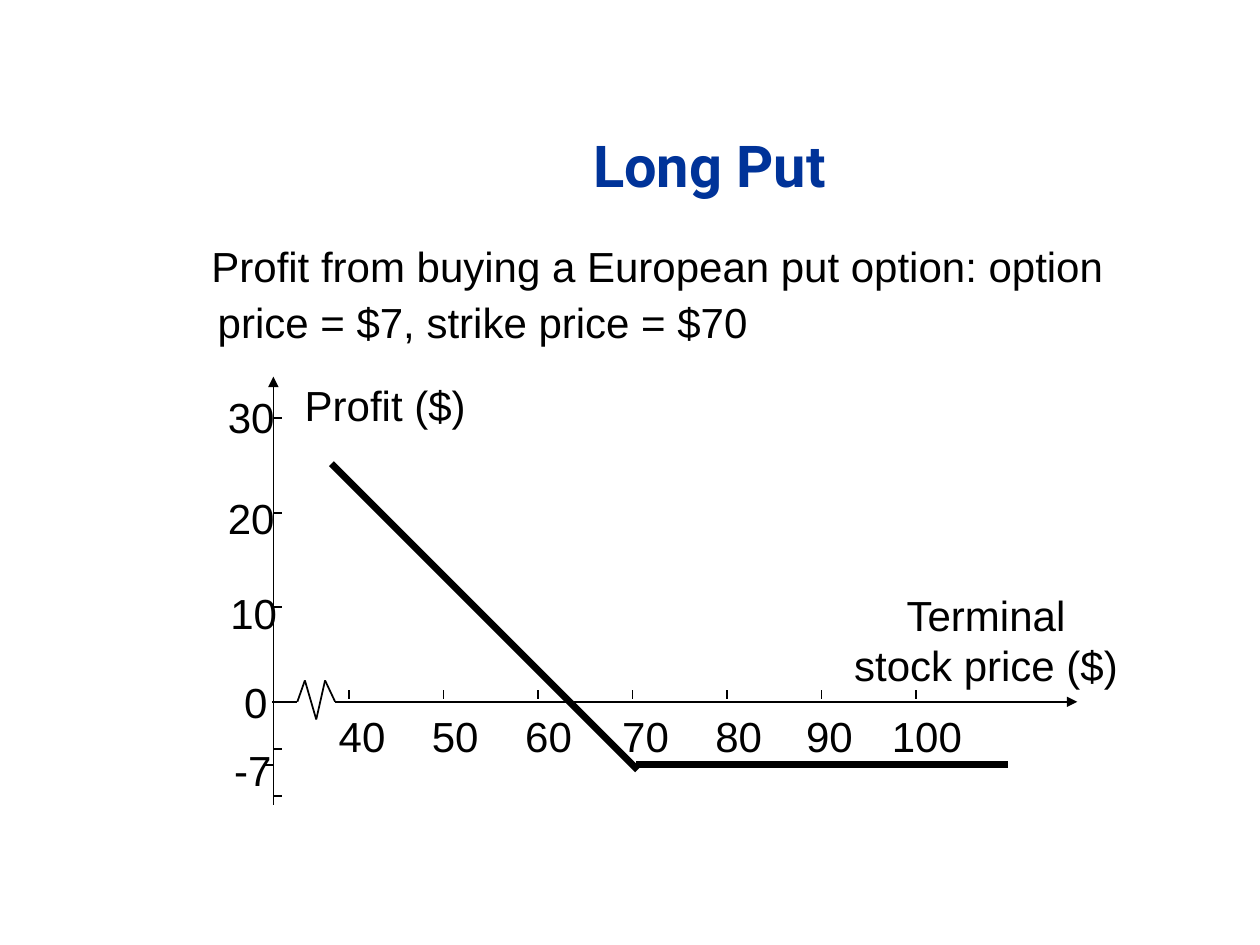
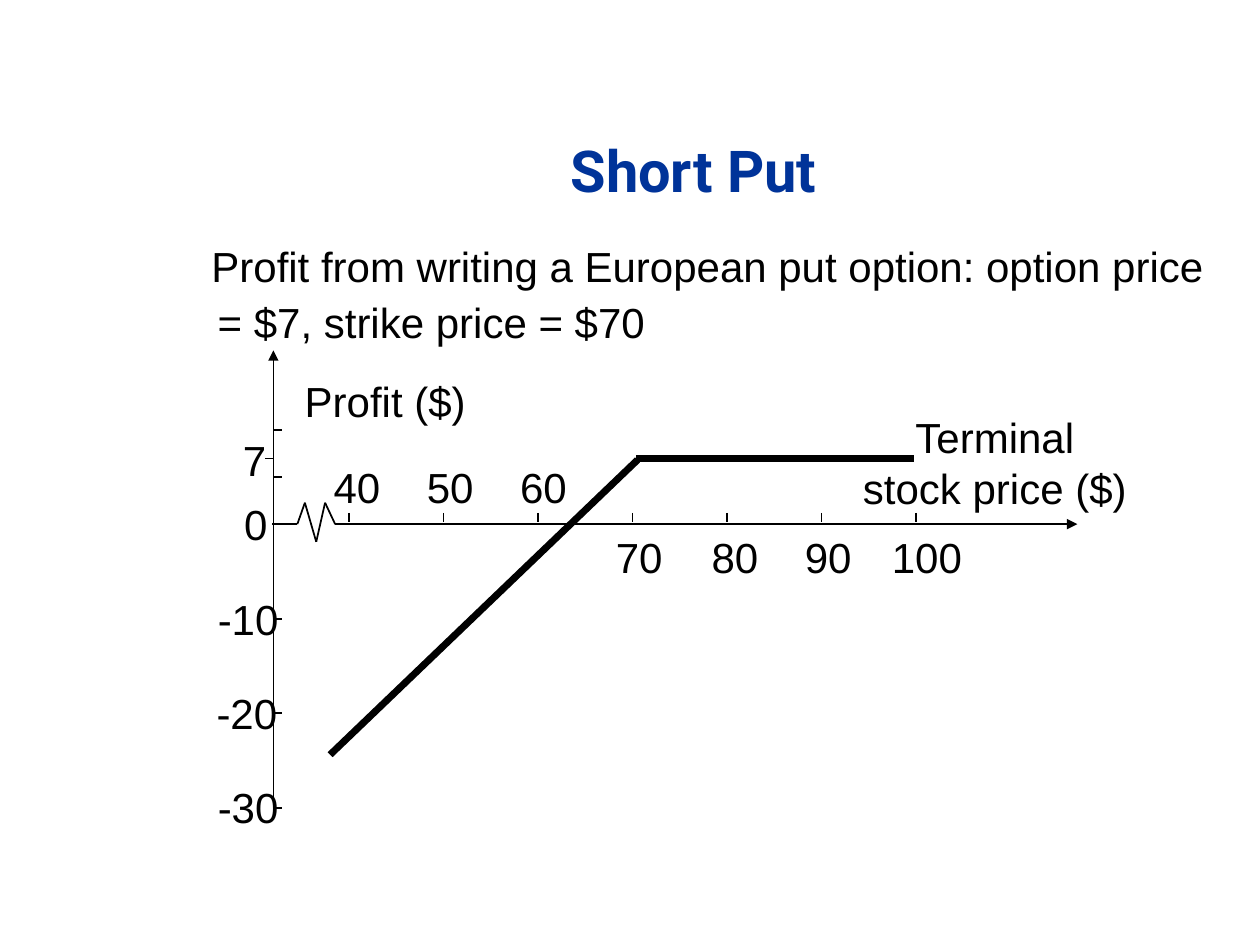
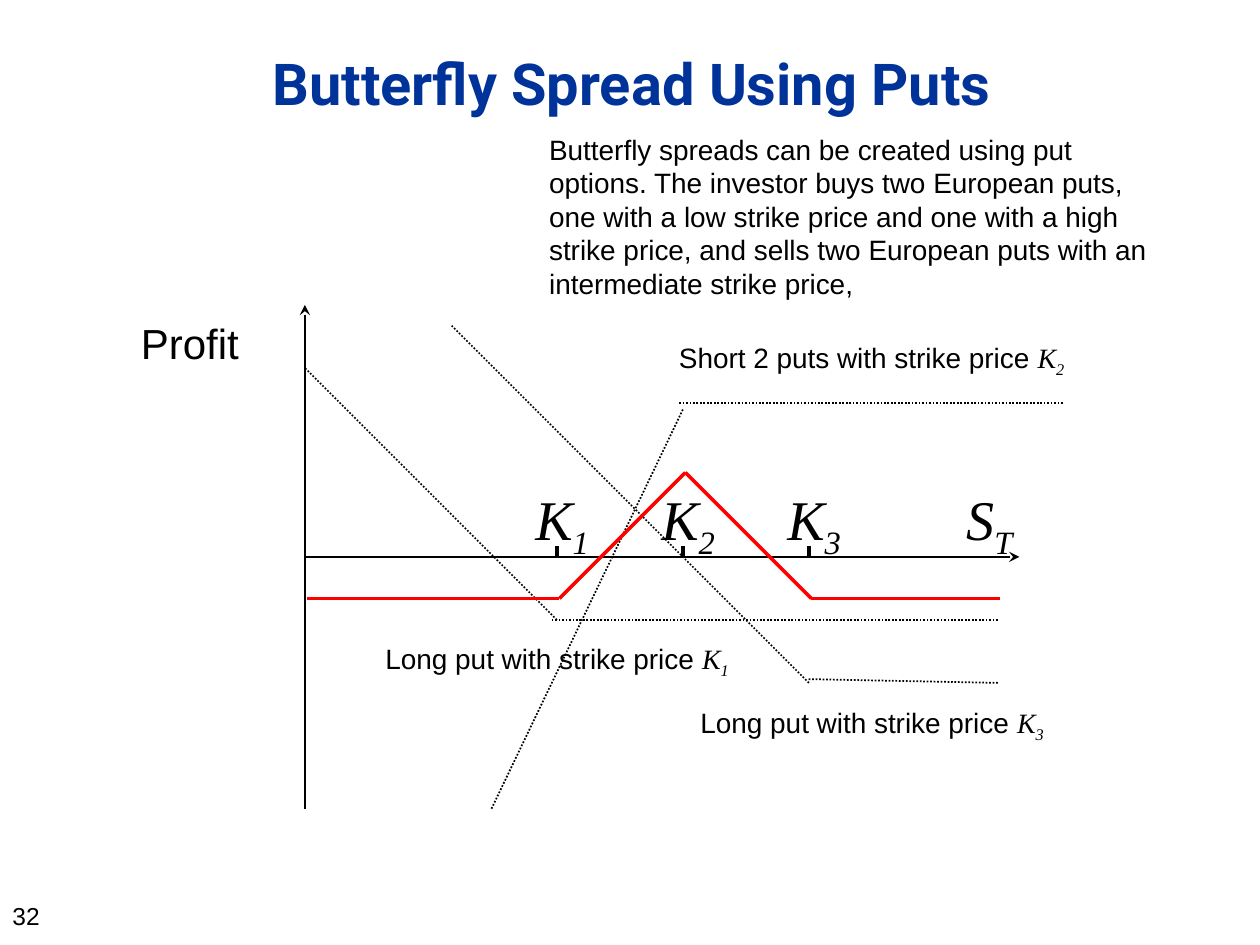
"""Build three slides on option payoffs: long put, short put and a butterfly spread."""
import itertools

import pptx
import pptx.dml.color
import pptx.enum.dml
import pptx.enum.shapes
import pptx.enum.text
import pptx.oxml
import pptx.oxml.ns
import pptx.util

Inches = pptx.util.Inches
ALIGN = pptx.enum.text.PP_ALIGN
ANCHOR = pptx.enum.text.MSO_ANCHOR
FIT = pptx.enum.text.MSO_AUTO_SIZE
DOT = pptx.enum.dml.MSO_LINE.ROUND_DOT

BLACK, NAVY, RED = "000000", "003399", "FF0000"
TITLE = {"name": "Roboto", "size": 33, "bold": True, "color": NAVY}
LABEL = {"name": "Arial", "size": 24, "color": BLACK}
NOTE = {**LABEL, "size": 16}
NUMBER = {**LABEL, "size": 14}
SYMBOL = {"name": "Times New Roman", "size": 32, "italic": True, "color": BLACK}
NOTE_SYMBOL = {**SYMBOL, "size": 16}

AXIS_X, AXIS_BOTTOM, AXIS_RIGHT = 2.17, 6.39, 8.55
PRICE_40_X, INCH_PER_DOLLAR = 2.77, 0.075
PRICES = range(40, 101, 10)
AXIS_BREAK = [(2.16, 0), (2.36, 0), (2.42, -0.17), (2.51, 0.14), (2.58, -0.17), (2.66, 0)]

PUTS = [
    {
        "title": ("Long Put", (1.92, 0.58, 7.42, 1.42)),
        "body": "Profit from buying a European put option: option price = $7, strike price = $70",
        "body_width": 8.4,
        "zero_y": 5.57,
        "axis_top": 2.99,
        "profit_ticks": [30, 20, 10, -5, -10],
        "premium": -7,
        "profit_labels": [("30", 1.71, 3.06), ("20", 1.71, 3.86), ("10", 1.73, 4.61),
                          ("0", 1.84, 5.32), ("-7", 1.76, 5.86)],
        "price_lefts": [2.59, 3.33, 4.07, 4.84, 5.58, 6.3, 6.98],
        "price_tops": [5.59] * 7,
        "profit_title_y": 2.96,
        "price_title": (6.68, 4.63, 2.29, 0.9),
        "payoff": [((5.05, 6.07), (8, 6.07)), ((5.06, 6.11), (2.63, 3.68))],
    },
    {
        "title": ("Short Put", (1.42, 0.67, 8.17, 1.33)),
        "body": "Profit from writing a European put option: option price = $7, strike price = $70",
        "body_width": 8.44,
        "zero_y": 4.16,
        "axis_top": 2.78,
        "profit_ticks": [10, 5, -10, -20, -30],
        "premium": 7,
        "profit_labels": [("7", 1.83, 3.4), ("0", 1.84, 3.91), ("-10", 1.63, 4.66),
                          ("-20", 1.62, 5.41), ("-30", 1.63, 6.15)],
        "price_lefts": [2.55, 3.29, 4.03, 4.79, 5.55, 6.29, 6.98],
        "price_tops": [3.61] * 3 + [4.17] * 4,
        "profit_title_y": 2.93,
        "price_title": (6.75, 3.22, 2.29, 0.9),
        "payoff": [((5.05, 3.64), (7.25, 3.64)), ((5.06, 3.65), (2.62, 5.99))],
    },
]

SPREAD_TITLE = ("Butterfly Spread Using Puts", (0.5, 0.26, 9.03, 1.31))
SPREAD_TEXT = (
    "Butterﬂy spreads can be created using put options. The investor buys two European puts, "
    "one with a low strike price and one with a high strike price, and sells two European puts "
    "with an intermediate strike price,"
)
SPREAD_ORIGIN = (2.42, 4.42)
STRIKE_XS = [4.42, 5.42, 6.42]
SYMBOLS = [("K", "1", 4.15, 0.64), ("K", "2", 5.15, 0.64), ("K", "3", 6.15, 0.64),
           ("S", "T", 7.57, 0.59)]
LEG_NOTES = [
    ("Short 2 puts with strike price ", "2", 5.29, 2.65),
    ("Long put with strike price ", "3", 5.46, 5.55),
    ("Long put with strike price ", "1", 2.96, 5.04),
]
LEGS = [
    ((7.92, 4.92), (4.38, 4.92)), ((4.42, 4.92), (2.42, 2.92)),
    ((7.92, 5.42), (6.41, 5.39)), ((6.42, 5.42), (3.58, 2.58)),
    ((5.39, 3.2), (8.44, 3.2)), ((5.42, 3.25), (3.9, 6.42)),
]
SPREAD_PROFIT = [(2.44, 4.75), (4.44, 4.75), (5.44, 3.75), (6.44, 4.75), (7.94, 4.75)]


def rgb(value):
    return pptx.dml.color.RGBColor.from_string(value)


def add_run(p, text, fmt, subscript=False):
    r = p.add_run()
    r.text = text
    for key, value in fmt.items():
        if key == "color":
            r.font.color.rgb = rgb(value)
        else:
            setattr(r.font, key, pptx.util.Pt(value) if key == "size" else value)
    if subscript:
        r._r.get_or_add_rPr().set("baseline", "-25000")


def add_text(s, box, paragraphs, frame=None, para=None):
    """Each paragraph is a list of (text, format[, subscript]) runs."""
    tf = s.shapes.add_textbox(*map(Inches, box)).text_frame
    for key, value in {"word_wrap": True, **(frame or {})}.items():
        setattr(tf, key, value)
    for i, runs in enumerate(paragraphs):
        p = tf.add_paragraph() if i else tf.paragraphs[0]
        for key, value in (para or {}).items():
            setattr(p, key, value)
        for run in runs:
            add_run(p, *run)
    return tf


def add_label(s, box, *paragraphs, align=ALIGN.LEFT):
    frame = {"word_wrap": False, "auto_size": FIT.SHAPE_TO_FIT_TEXT}
    add_text(s, box, paragraphs, frame, {"alignment": align})


def add_title(s, text, box, bottom=0.05):
    frame = {"vertical_anchor": ANCHOR.MIDDLE, "margin_bottom": Inches(bottom)}
    add_text(s, box, [[(text, TITLE)]], frame, {"alignment": ALIGN.CENTER, "line_spacing": 1.05})


def add_line(s, start, end, color=BLACK, width=1, dash=None, head=None, tail=None):
    sp = s.shapes.add_connector(
        pptx.enum.shapes.MSO_CONNECTOR.STRAIGHT, *map(Inches, (*start, *end)))
    sp.line.color.rgb = rgb(color)
    sp.line.width = pptx.util.Pt(width)
    if dash:
        sp.line.dash_style = dash
    ln = sp.line._get_or_add_ln()
    for tag, kind in (("a:headEnd", head), ("a:tailEnd", tail)):
        if kind:
            end_mark = pptx.oxml.parse_xml(f"<{tag} {pptx.oxml.ns.nsdecls('a')} type='{kind}'/>")
            ln.append(end_mark)
    effects = pptx.oxml.parse_xml(f"<a:effectLst {pptx.oxml.ns.nsdecls('a')}/>")
    sp._element.spPr.append(effects)


def number_box(text, left, top):
    digits = len(text.lstrip("-"))
    return left, top, 0.2 + 0.185 * digits + 0.11 * text.count("-"), 0.5


def draw_put(s, put):
    zero = put["zero_y"]
    add_title(s, *put["title"])
    add_text(s, (1.25, 1.75, put["body_width"], 4.5), [[(put["body"], LABEL)]],
             {"margin_top": Inches(0.12)}, {"line_spacing": 1.1})
    pPr = s.shapes[-1].text_frame.paragraphs[0]._p.get_or_add_pPr()
    pPr.set("marL", str(Inches(0.38)))
    pPr.set("indent", str(Inches(-0.05)))

    add_line(s, (AXIS_X, put["axis_top"]), (AXIS_X, AXIS_BOTTOM), head="triangle")
    add_line(s, (AXIS_BREAK[-1][0], zero), (AXIS_RIGHT, zero), tail="triangle")
    for (x1, dy1), (x2, dy2) in itertools.pairwise(AXIS_BREAK):
        add_line(s, (x1, zero + dy1), (x2, zero + dy2))
    for profit in put["profit_ticks"]:
        y = zero - profit * INCH_PER_DOLLAR
        add_line(s, (AXIS_X, y), (AXIS_X + 0.07, y))
    premium_y = zero - put["premium"] * INCH_PER_DOLLAR + (0.04 if put["premium"] < 0 else 0)
    premium_y = put["payoff"][0][0][1] if abs(premium_y - zero) > 0 else zero
    add_line(s, (AXIS_X, premium_y), (AXIS_X - 0.07, premium_y))

    for text, left, top in put["profit_labels"]:
        add_label(s, number_box(text, left, top), [(text, LABEL)])
    for price, left, top in zip(PRICES, put["price_lefts"], put["price_tops"]):
        x = PRICE_40_X + (price - 40) * INCH_PER_DOLLAR
        add_line(s, (x, zero - 0.09), (x, zero - 0.02))
        add_label(s, number_box(str(price), left, top), [(str(price), LABEL)])
    add_label(s, (2.32, put["profit_title_y"], 1.48, 0.5), [("Profit ($)", LABEL)])
    add_label(s, put["price_title"], [("Terminal", LABEL)], [("stock price ($)", LABEL)],
              align=ALIGN.CENTER)
    for start, end in put["payoff"]:
        add_line(s, start, end, width=4)


def draw_spread(s):
    x0, y0 = SPREAD_ORIGIN
    add_title(s, *SPREAD_TITLE, bottom=0.6)
    add_line(s, (x0, 2.42), (x0, 6.42), head="stealth")
    add_line(s, (x0, y0), (8.09, y0), tail="stealth")
    for x in STRIKE_XS:
        add_line(s, (x, y0), (x, y0 - 0.09), width=2)
    for letter, index, left, width in SYMBOLS:
        add_label(s, (left, 3.8, width, 0.63), [(letter, SYMBOL), (index, SYMBOL, True)])
    add_text(s, (1.02, 2.47, 2.63, 0.51), [[("Profit", LABEL)]])
    for start, end in LEGS:
        add_line(s, start, end, dash=DOT)
    for start, end in itertools.pairwise(SPREAD_PROFIT):
        add_line(s, start, end, RED, 2)
    add_text(s, (0, 7.1, 2.25, 0.4), [[("32", NUMBER)]])
    add_text(s, (4.26, 1, 5, 1.45), [[(SPREAD_TEXT, NOTE)]])
    for text, index, left, top in LEG_NOTES:
        runs = [(text, NOTE), ("K", NOTE_SYMBOL), (index, NOTE_SYMBOL, True)]
        add_text(s, (left, top, 3.52, 0.77), [runs])


def main():
    prs = pptx.Presentation()
    prs.slide_width, prs.slide_height = Inches(10), Inches(7.5)
    blank = prs.slide_layouts[6]
    for put in PUTS:
        draw_put(prs.slides.add_slide(blank), put)
    draw_spread(prs.slides.add_slide(blank))
    prs.save("out.pptx")


if __name__ == "__main__":
    main()
